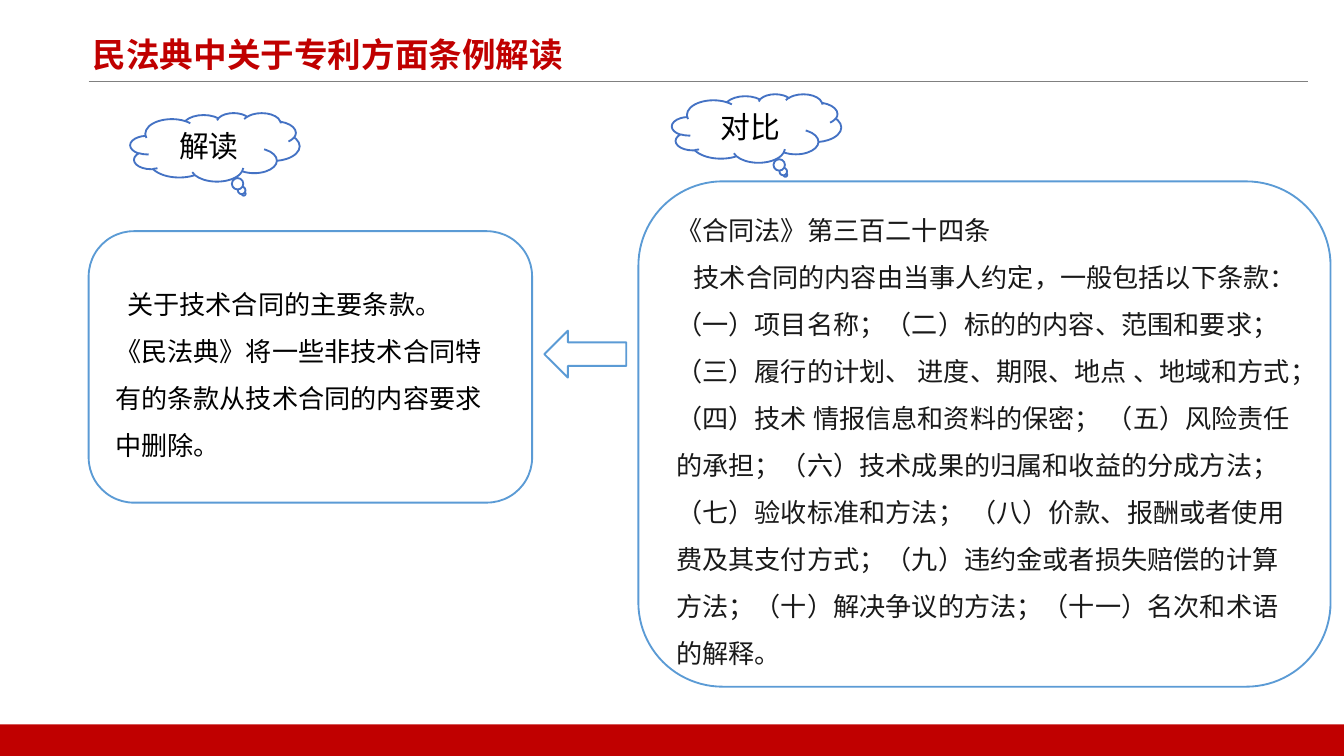
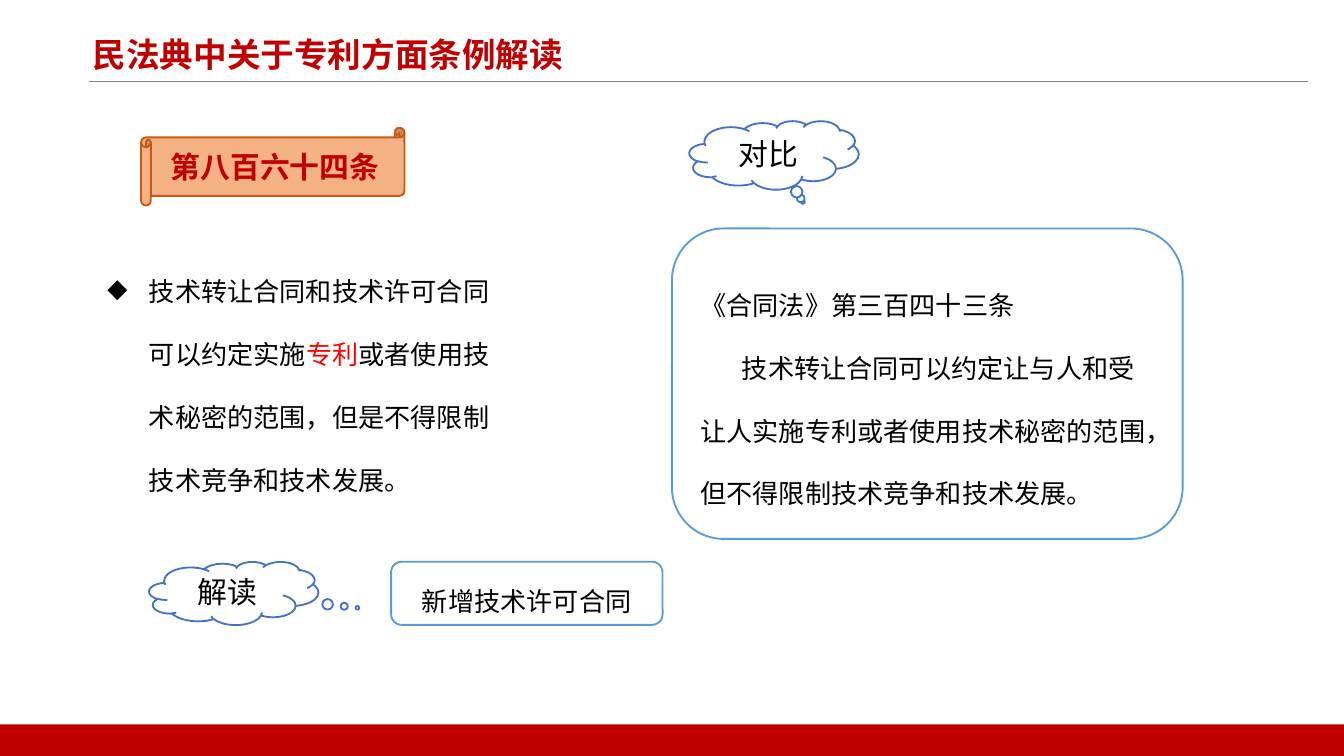
from dataclasses import dataclass

from lxml import etree
from pptx import Presentation
from pptx.dml.color import RGBColor
from pptx.enum.shapes import MSO_CONNECTOR, MSO_SHAPE
from pptx.enum.text import MSO_ANCHOR, MSO_AUTO_SIZE, PP_ALIGN
from pptx.oxml.ns import qn
from pptx.util import Inches, Pt

CLOUD = MSO_SHAPE.CLOUD_CALLOUT
ROUNDED = MSO_SHAPE.ROUNDED_RECTANGLE
SCROLL = MSO_SHAPE.HORIZONTAL_SCROLL
ARROW = MSO_SHAPE.RIGHT_ARROW
RECTANGLE = MSO_SHAPE.RECTANGLE
STRAIGHT = MSO_CONNECTOR.STRAIGHT
LEFT, CENTER = PP_ALIGN.LEFT, PP_ALIGN.CENTER
TOP, MIDDLE = MSO_ANCHOR.TOP, MSO_ANCHOR.MIDDLE
NO_FIT, GROW = MSO_AUTO_SIZE.NONE, MSO_AUTO_SIZE.SHAPE_TO_FIT_TEXT

CELL = Inches(0.1)
COLUMNS, ROWS = 100, 56.25
TITLE_ONLY = 5
TAIL_BELOW = (0.17, 0.68)
TAIL_RIGHT = (0.73, 0.23)


@dataclass(frozen=True)
class Theme:
    """Colours, font and type sizes of the deck."""

    font: str = "Noto Sans CJK SC"
    title_size: int = 18
    label_size: int = 16
    body_size: int = 14
    red: str = "C00000"
    highlight: str = "FF0000"
    black: str = "000000"
    soft_black: str = "191919"
    white: str = "FFFFFF"
    rule: str = "808080"
    cloud_line: str = "4472C4"
    card_line: str = "5B9BD5"
    scroll_fill: str = "F4B183"
    scroll_line: str = "C55A11"


def apply(target, formats):
    """Set each named format value on the target."""
    for name, value in formats.items():
        setattr(target, name, value)


def cells(*counts):
    """Turn grid counts into lengths."""
    return [round(count * CELL) for count in counts]


class Board:
    """Holds the theme and the current page and draws each kind of element."""

    def __init__(self, theme):
        """Open a deck sized to the grid."""
        self.theme = theme
        self.deck = Presentation()
        self.deck.slide_width, self.deck.slide_height = cells(COLUMNS, ROWS)
        self.page = None

    def start_page(self, title):
        """Add a page with its rule, bottom band and title."""
        theme = self.theme
        self.page = self.deck.slides.add_slide(self.deck.slide_layouts[TITLE_ONLY])
        self.rule(6.6, 97.3, 6.1)
        self.shape(RECTANGLE, (0, 53.9, COLUMNS, ROWS - 53.9), theme.red)
        box = self.page.shapes.title
        box.left, box.top, box.width, box.height = cells(5.9, 2, 90.9, 3.5)
        apply(box.text_frame, {"auto_size": NO_FIT, "vertical_anchor": TOP})
        self.fill_text(box, [title], theme.title_size, theme.red, bold=True)

    def rule(self, start, end, row):
        """Draw the thin line under the title."""
        line = self.page.shapes.add_connector(STRAIGHT, *cells(start, row, end, row))
        line.line.color.rgb = RGBColor.from_string(self.theme.rule)
        line.line.width = Pt(0.5)
        etree.SubElement(line._element.spPr, qn("a:effectLst"))

    def shape(self, kind, place, fill=None, outline=None):
        """Draw a preset shape without shadow."""
        shape = self.page.shapes.add_shape(kind, *cells(*place))
        shape.shadow.inherit = False
        if fill:
            shape.fill.solid()
            shape.fill.fore_color.rgb = RGBColor.from_string(fill)
        else:
            shape.fill.background()
        if outline:
            shape.line.color.rgb = RGBColor.from_string(outline)
            shape.line.width = Pt(1)
        else:
            shape.line.fill.background()
        return shape

    def fill_text(self, box, texts, size, color, bold=False, align=LEFT,
                  spacing=1.0, indents=(), bullet=None):
        """Fill a box with paragraphs; a text may be a list of (words, colour) spans."""
        frame = box.text_frame
        frame.word_wrap = True
        for index, text in enumerate(texts):
            para = frame.paragraphs[0] if index == 0 else frame.add_paragraph()
            apply(para, {"alignment": align, "line_spacing": spacing,
                         "space_before": Pt(0)})
            properties = para._p.get_or_add_pPr()
            if bullet:
                properties.set("marL", str(Inches(0.31)))
                properties.set("indent", str(-Inches(0.31)))
                etree.SubElement(properties, qn("a:buChar"), char=bullet)
            elif indents:
                properties.set("indent", str(cells(indents[index])[0]))
            spans = [(text, color)] if isinstance(text, str) else text
            for words, tint in spans:
                self.span(para, words, size, tint, bold)

    def span(self, para, words, size, color, bold):
        """Add one run in the deck's font."""
        span = para.add_run()
        span.text = words
        apply(span.font, {"name": self.theme.font, "size": Pt(size), "bold": bold})
        span.font.color.rgb = RGBColor.from_string(color)
        etree.SubElement(span._r.get_or_add_rPr(), qn("a:ea"), typeface=self.theme.font)

    def cloud(self, label, place, tail=TAIL_BELOW):
        """Draw a thought cloud whose tail points at its card."""
        theme = self.theme
        cloud = self.shape(CLOUD, place, theme.white, theme.cloud_line)
        for index, value in enumerate(tail):
            cloud.adjustments[index] = value
        self.fill_text(cloud, [label], theme.label_size, theme.black, align=CENTER)

    def card(self, texts, place, color=None, **formats):
        """Draw a rounded outline card with body text."""
        theme = self.theme
        card = self.shape(ROUNDED, place, outline=theme.card_line)
        card.text_frame.vertical_anchor = MIDDLE
        self.fill_text(card, texts, theme.body_size, color or theme.black, **formats)

    def arrow_left(self, place):
        """Draw a block arrow that points left."""
        arrow = self.shape(ARROW, place, self.theme.white, self.theme.card_line)
        arrow.rotation = 180

    def scroll(self, label, place):
        """Draw a scroll that carries the article number."""
        theme = self.theme
        scroll = self.shape(SCROLL, place, theme.scroll_fill, theme.scroll_line)
        self.fill_text(scroll, [label], theme.label_size, theme.red, bold=True,
                       align=CENTER)

    def bullets(self, texts, place, **formats):
        """Add a bulleted text box."""
        box = self.page.shapes.add_textbox(*cells(*place))
        self.fill_text(box, texts, self.theme.body_size, self.theme.black,
                       bullet="◆", **formats)
        box.text_frame.auto_size = GROW


TITLE = "民法典中关于专利方面条例解读"
CONTRACT_TERMS = (
    "技术合同的内容由当事人约定，一般包括以下条款：（一）项目名称；"
    "（二）标的的内容、范围和要求；（三）履行的计划、 进度、期限、地点 、地域和方式；"
    "（四）技术 情报信息和资料的保密； （五）风险责任的承担；"
    "（六）技术成果的归属和收益的分成方法；（七）验收标准和方法； "
    "（八）价款、报酬或者使用费及其支付方式；（九）违约金或者损失赔偿的计算方法；"
    "（十）解决争议的方法；（十一）名次和术语的解释。"
)
TRANSFER_TERMS = (
    "技术转让合同可以约定让与人和受让人实施专利或者使用技术秘密的范围，"
    "但不得限制技术竞争和技术发展。"
)


def contract_terms_page(board):
    """Build the page on the main terms of a technology contract."""
    board.start_page(TITLE)
    board.cloud("解读", (9.7, 8.4, 12.6, 5.1))
    board.card(
        ["关于技术合同的主要条款。",
         "《民法典》将一些非技术合同特有的条款从技术合同的内容要求中删除。"],
        (6.6, 17.2, 33, 20.2), spacing=1.5, indents=(0.9, 0))
    board.arrow_left((40.5, 24.6, 6.1, 3.5))
    board.cloud("对比", (50, 7, 12.6, 5.1))
    board.card(["《合同法》第三百二十四条", CONTRACT_TERMS], (47.5, 13.5, 51.5, 37.6),
               color=board.theme.soft_black, spacing=1.5, indents=(0, 1.3))


def transfer_page(board):
    """Build the page on transfer and licence contracts."""
    theme = board.theme
    board.start_page(TITLE)
    board.scroll("第八百六十四条", (10.5, 9.5, 19.6, 5.8))
    board.bullets(
        [[("技术转让合同和技术许可合同可以约定实施", theme.black),
          ("专利", theme.highlight),
          ("或者使用技术秘密的范围，但是不得限制技术竞争和技术发展。", theme.black)]],
        (7, 17.7, 31.3, 19), spacing=2.0)
    board.cloud("对比", (51.3, 9, 12.6, 5.1))
    board.card(["《合同法》第三百四十三条", TRANSFER_TERMS], (50, 17, 38, 23.1),
               spacing=2.0, indents=(0, 3.1))
    board.cloud("解读", (11.1, 41.8, 12.6, 4.7), TAIL_RIGHT)
    board.card(["新增技术许可合同"], (29.1, 41.8, 20.2, 4.7), align=CENTER, spacing=1.5)


def main():
    """Build and save the deck."""
    board = Board(Theme())
    contract_terms_page(board)
    transfer_page(board)
    board.deck.save("out.pptx")


if __name__ == "__main__":
    main()
